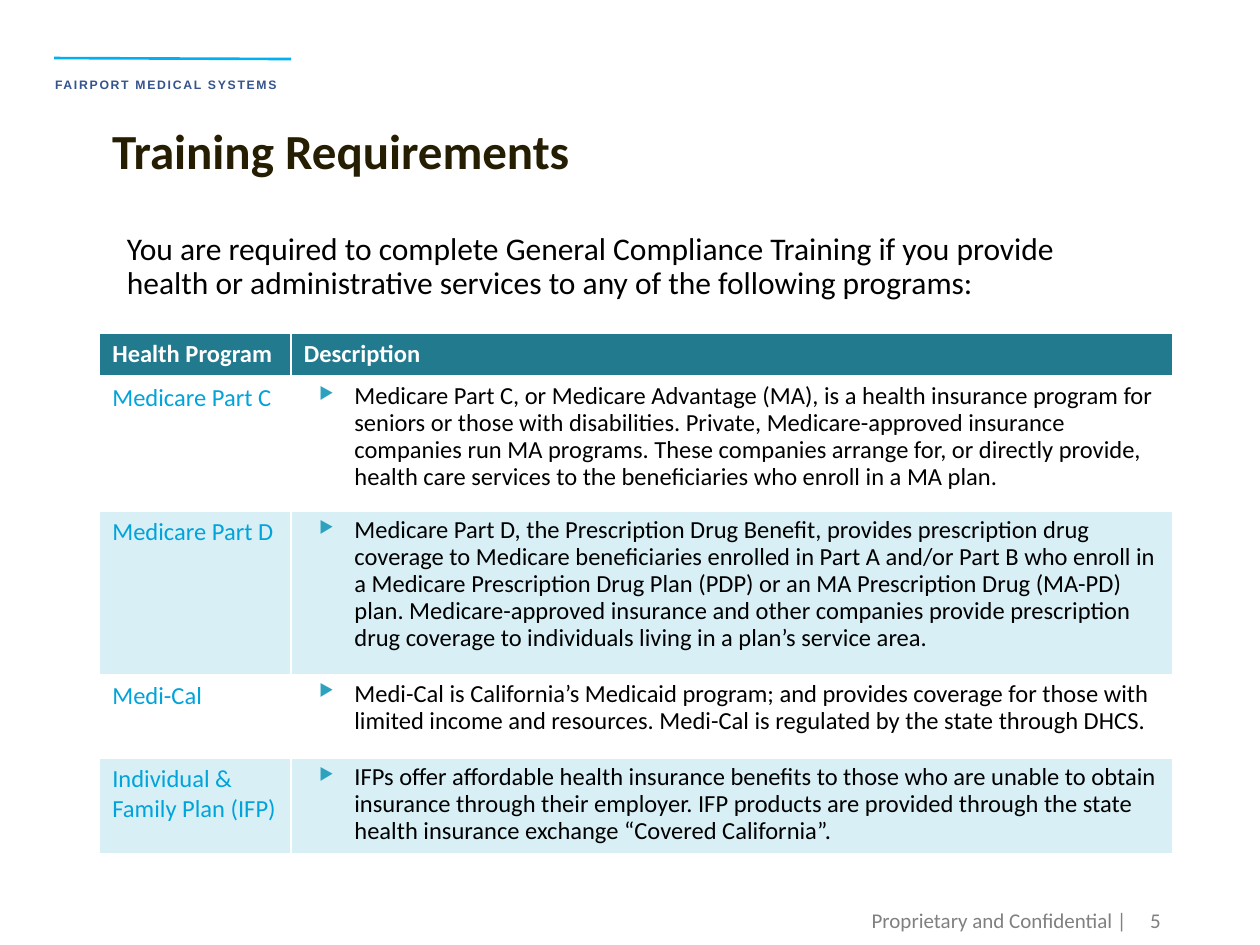
import pptx
import pptx.util
import pptx.dml.color
import pptx.enum.shapes
import pptx.enum.text
import pptx.oxml
import pptx.oxml.ns

Cm, Pt = pptx.util.Cm, pptx.util.Pt
Align, Anchor = pptx.enum.text.PP_ALIGN, pptx.enum.text.MSO_ANCHOR
NS = pptx.oxml.ns.nsdecls("a")
HUES = {"white": "FFFFFF", "black": "000000", "head": "227A8F", "band": "D7EFF5",
        "plan": "00A3DA", "mark": "2DA2BF", "title": "261E03", "gray": "808080",
        "firm": "35538D", "rule": "00B0F0"}

HEADS = ("Health Program", "Description")
PLANS = [
    ("Medicare Part C", "Medicare Part C, or Medicare Advantage (MA), is a health insurance program for seniors or those with disabilities. Private, Medicare-approved insurance companies run MA programs. These companies arrange for, or directly provide, health care services to the beneficiaries who enroll in a MA plan."),
    ("Medicare Part D", "Medicare Part D, the Prescription Drug Benefit, provides prescription drug coverage to Medicare beneficiaries enrolled in Part A and/or Part B who enroll in a Medicare Prescription Drug Plan (PDP) or an MA Prescription Drug (MA-PD) plan. Medicare-approved insurance and other companies provide prescription drug coverage to individuals living in a plan’s service area."),
    ("Medi-Cal", "Medi-Cal is California’s Medicaid program; and provides coverage for those with limited income and resources. Medi-Cal is regulated by the state through DHCS."),
    ("Individual & Family Plan (IFP)", "IFPs offer affordable health insurance benefits to those who are unable to obtain insurance through their employer. IFP products are provided through the state health insurance exchange “Covered California”."),
]
WIDE = (3.86, 17.78)
HIGH = (0.89, 2.7, 3.3, 1.68, 1.93)
LEFT = 2.01
FOOT = dict(size=12, hue="gray", align=Align.RIGHT, anchor=Anchor.MIDDLE)
TEXTS = [
    ("FAIRPORT MEDICAL SYSTEMS", (0.86, 1.17, 5.18, 0.74),
     dict(size=7, hue="firm", bold=True, face="Arial", track=100, lead=Pt(16), wrap=False)),
    ("Training Requirements", (LEFT, 2.31, 14.35, 1.45), dict(size=28, hue="title", bold=True)),
    ("You are required to complete General Compliance Training if you provide health or administrative services to any of the following programs:",
     (LEFT, 4.57, 20.47, 1.65), dict(size=18, lead=0.9, inset=0.3)),
    ("Proprietary and Confidential |", (14.38, 18.03, 8.59, 1.02), FOOT),
    ("5", (22.48, 18.03, 1.17, 1.02), FOOT),
]


def tint(name):
    return pptx.dml.color.RGBColor.from_string(HUES[name])


def say(frame, text, size=14, hue="black", bold=False, face="Calibri", align=None,
        anchor=None, track=None, lead=None, inset=0, mark=False, wrap=True):
    frame.word_wrap = wrap
    if anchor is not None:
        frame.vertical_anchor = anchor
    para = frame.paragraphs[0]
    props = para._p.get_or_add_pPr()
    if mark:
        inset = 1.02
        props.set("indent", str(Cm(-0.71)))
        for xml in (f'<a:buClr {NS}><a:srgbClr val="{HUES["mark"]}"/></a:buClr>',
                    f'<a:buSzPct {NS} val="68000"/>',
                    f'<a:buChar {NS} char="▶"/>'):
            props.append(pptx.oxml.parse_xml(xml))
    if inset:
        props.set("marL", str(Cm(inset)))
    if align is not None:
        para.alignment = align
    if lead is not None:
        para.line_spacing = lead
    run = para.add_run()
    run.text = text
    font = run.font
    font.size, font.bold, font.name = Pt(size), bold, face
    font.color.rgb = tint(hue)
    if track:
        run._r.get_or_add_rPr().set("spc", str(track))


def edge(cell, top, base):
    props = cell._tc.get_or_add_tcPr()
    for side, width in zip("LRTB", (1, 1, top, base)):
        props.append(pptx.oxml.parse_xml(
            f'<a:ln{side} {NS} w="{Pt(width)}"><a:solidFill>'
            f'<a:srgbClr val="{HUES["white"]}"/></a:solidFill></a:ln{side}>'))


def fill_grid(slide):
    rows = [HEADS] + PLANS
    grid = slide.shapes.add_table(len(rows), len(WIDE), Cm(LEFT), Cm(6.71),
                                  Cm(sum(WIDE)), Cm(sum(HIGH))).table
    grid.first_row = grid.horz_banding = False
    for col, width in zip(grid.columns, WIDE):
        col.width = Cm(width)
    for r, row in enumerate(rows):
        grid.rows[r].height = Cm(HIGH[r])
        for c, text in enumerate(row):
            cell = grid.cell(r, c)
            edge(cell, 3 if r == 1 else 1, 3 if r == 0 else 1)
            if r % 2:
                cell.fill.background()
            else:
                cell.fill.solid()
                cell.fill.fore_color.rgb = tint("band" if r else "head")
            if r == 0:
                style = dict(hue="white", bold=True)
            elif c == 0:
                style = dict(hue="plan")
            else:
                style = dict(lead=0.9, mark=True)
            say(cell.text_frame, text, **style)


def main():
    deck = pptx.Presentation()
    deck.slide_width, deck.slide_height = Cm(25.4), Cm(19.05)
    slide = deck.slides.add_slide(deck.slide_layouts[6])
    rule = slide.shapes.add_connector(pptx.enum.shapes.MSO_CONNECTOR.STRAIGHT,
                                      Cm(1.09), Cm(1.17), Cm(5.87), Cm(1.19))
    rule.line.color.rgb, rule.line.width = tint("rule"), Pt(1.5)
    rule._element.spPr.append(pptx.oxml.parse_xml(f"<a:effectLst {NS}/>"))
    fill_grid(slide)
    for text, place, style in TEXTS:
        box = slide.shapes.add_textbox(*map(Cm, place))
        say(box.text_frame, text, **style)
    deck.save("out.pptx")


if __name__ == "__main__":
    main()
